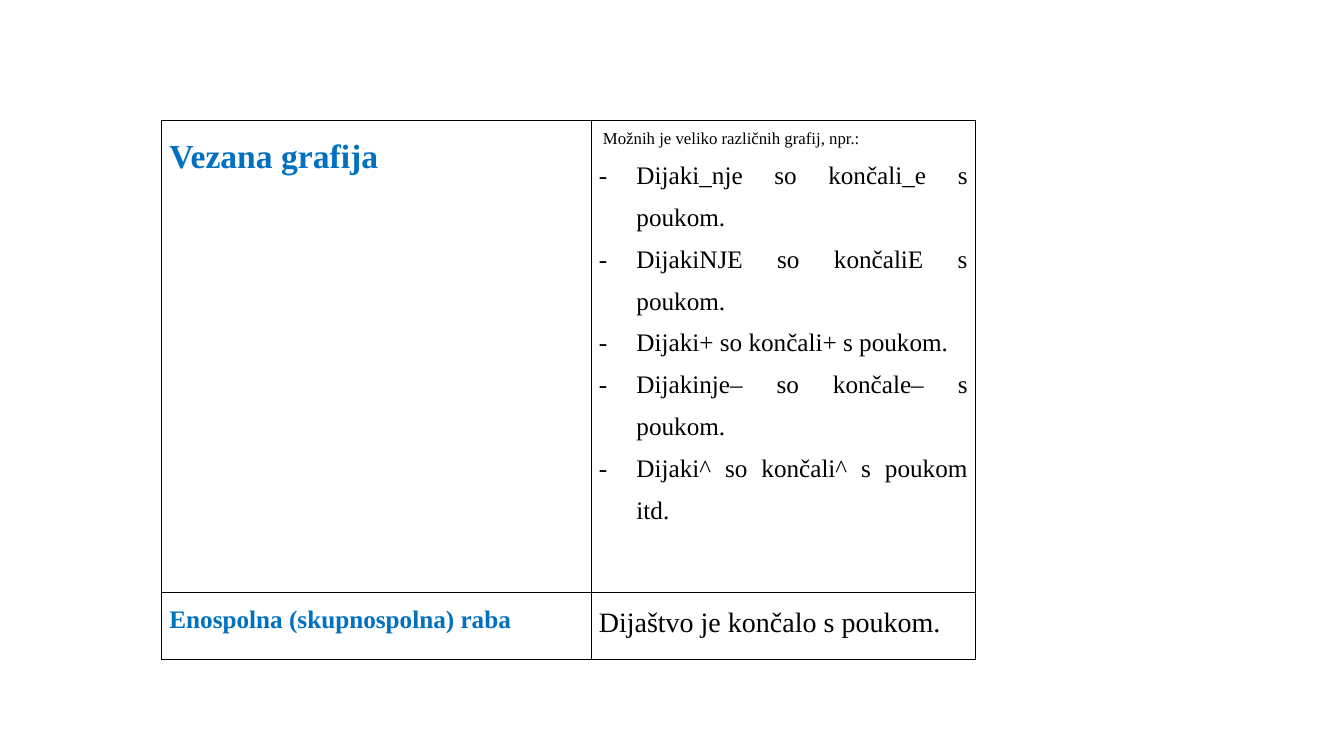
from dataclasses import dataclass

from lxml.etree import SubElement as Sub
from pptx import Presentation as Deck
from pptx.dml.color import RGBColor as Rgb
from pptx.enum.text import PP_ALIGN as Align
from pptx.oxml import parse_xml as to_xml
from pptx.oxml.ns import qn
from pptx.util import Cm, Pt

HUES = {"ink": "000000", "head": "0070C0"}
FONT = "Times New Roman"
NS = "http://schemas.openxmlformats.org/drawingml/2006/main"
COLS = (10.82, 9.68)
ROWS = (11.89, 1.7)
PAD = 0.19
DENT = 0.95


@dataclass
class Line:
    text: str
    size: int
    hue: str = "ink"
    bold: bool = False
    dash: bool = False


# Table content, row by row
FORMS = (
    "Dijaki_nje so končali_e s poukom.",
    "DijakiNJE so končaliE s poukom.",
    "Dijaki+ so končali+ s poukom.",
    "Dijakinje‒ so končale‒ s poukom.",
    "Dijaki^ so končali^ s poukom itd.",
)
GRID = (
    (
        [Line("Vezana grafija", 24, "head", True)],
        [Line(" Možnih je veliko različnih grafij, npr.:", 12)]
        + [Line(form, 18, dash=True) for form in FORMS],
    ),
    (
        [Line("Enospolna (skupnospolna) raba", 18, "head", True)],
        [Line("Dijaštvo je končalo s poukom.", 20)],
    ),
)


def write(para, text: str, *, size: int, hue: str, bold: bool, dash: bool) -> None:
    """Fill one justified paragraph, with a hanging dash if asked."""
    para.alignment = Align.JUSTIFY
    para.line_spacing = 1.5
    run = para.add_run()
    run.text = text
    font = run.font
    font.name, font.size, font.bold = FONT, Pt(size), bold
    font.color.rgb = Rgb.from_string(HUES[hue])
    if dash:
        props = para._p.get_or_add_pPr()
        props.set("marL", str(Cm(DENT)))
        props.set("indent", str(-Cm(DENT)))
        Sub(props, qn("a:buFont"), typeface=FONT)
        Sub(props, qn("a:buChar"), char="-")


def frame(cell) -> None:
    """Give a cell no fill and a thin line on each side."""
    cell.fill.background()
    props = cell._tc.get_or_add_tcPr()
    for spot, side in enumerate("LRTB"):
        props.insert(spot, to_xml(
            f'<a:ln{side} xmlns:a="{NS}" w="{Pt(1)}"><a:solidFill>'
            f'<a:srgbClr val="{HUES["ink"]}"/></a:solidFill></a:ln{side}>'))


def fill(cell, lines: list[Line]) -> None:
    """Format a cell and write its lines."""
    frame(cell)
    cell.margin_left = cell.margin_right = Cm(PAD)
    cell.margin_top = cell.margin_bottom = 0
    body = cell.text_frame
    for num, line in enumerate(lines):
        para = body.add_paragraph() if num else body.paragraphs[0]
        write(para, line.text, size=line.size, hue=line.hue,
              bold=line.bold, dash=line.dash)


def main() -> None:
    deck = Deck()
    deck.slide_width, deck.slide_height = Cm(33.87), Cm(19.05)
    slide = deck.slides.add_slide(deck.slide_layouts[6])

    # Table of writing styles
    table = slide.shapes.add_table(
        len(ROWS), len(COLS), Cm(4.08), Cm(3.03),
        Cm(sum(COLS)), Cm(sum(ROWS))).table
    table.first_row = table.horz_banding = False
    for col, wide in zip(table.columns, COLS):
        col.width = Cm(wide)
    for row, high, cells in zip(table.rows, ROWS, GRID):
        row.height = Cm(high)
        for cell, lines in zip(row.cells, cells):
            fill(cell, lines)

    deck.save("out.pptx")


if __name__ == "__main__":
    main()
